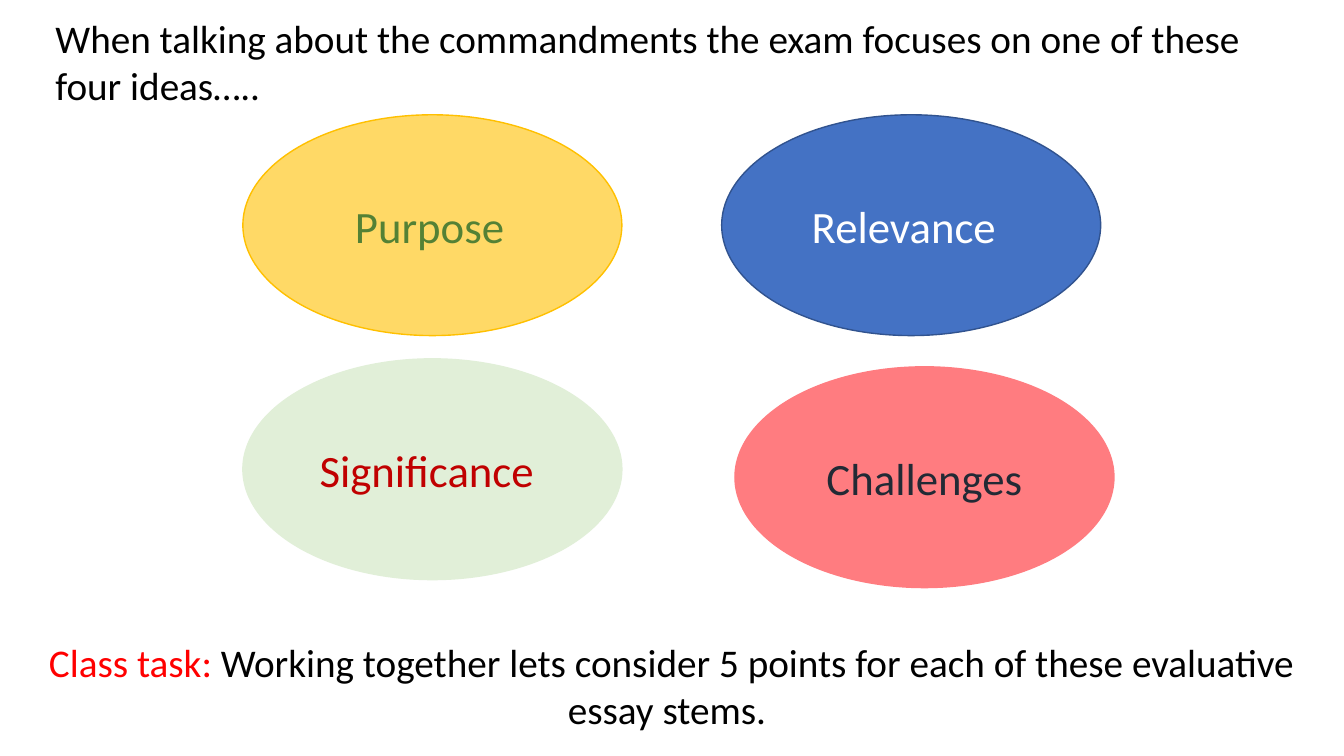
"""Build a slide of four evaluative ideas with a class task."""
import pptx
import pptx.dml.color
import pptx.enum.shapes
import pptx.enum.text
import pptx.util

Pt = pptx.util.Pt
RGBColor = pptx.dml.color.RGBColor
PP_ALIGN = pptx.enum.text.PP_ALIGN
MSO_ANCHOR = pptx.enum.text.MSO_ANCHOR
MSO_AUTO_SIZE = pptx.enum.text.MSO_AUTO_SIZE

FONT = "Calibri"
BLACK = RGBColor(0x00, 0x00, 0x00)
WHITE = RGBColor(0xFF, 0xFF, 0xFF)
RED = RGBColor(0xFF, 0x00, 0x00)
DARK_RED = RGBColor(0xC0, 0x00, 0x00)
YELLOW = RGBColor(0xFF, 0xD9, 0x66)
GOLD = RGBColor(0xFF, 0xC0, 0x00)
GREEN = RGBColor(0x54, 0x81, 0x35)
PALE_GREEN = RGBColor(0xE1, 0xEF, 0xD8)
BLUE = RGBColor(0x44, 0x72, 0xC4)
NAVY = RGBColor(0x31, 0x53, 0x8F)
PINK = RGBColor(0xFF, 0x7C, 0x80)
SLATE = RGBColor(0x22, 0x2A, 0x35)


def style_run(r, size, color):
    r.font.name = FONT
    r.font.size = Pt(size)
    r.font.color.rgb = color


prs = pptx.Presentation()
prs.slide_width, prs.slide_height = Pt(960), Pt(540)
s = prs.slides.add_slide(prs.slide_layouts[5])

title = s.shapes.title
title.left, title.top, title.width, title.height = Pt(32.4), Pt(6.7), Pt(893.5), Pt(75)
tf = title.text_frame
tf.text = "When talking about the commandments the exam focuses on one of these four ideas….."
tf.word_wrap = True
tf.auto_size = MSO_AUTO_SIZE.NONE
tf.vertical_anchor = MSO_ANCHOR.TOP
p = tf.paragraphs[0]
p.alignment = PP_ALIGN.LEFT
style_run(p.runs[0], 28, BLACK)

ideas = [
    ("Purpose", 173.5, 82, YELLOW, GOLD, GREEN, 11),
    ("Challenges", 525, 262, PINK, PINK, SLATE, 7.2),
    ("Significance", 173.5, 256.3, PALE_GREEN, PALE_GREEN, DARK_RED, 15),
    ("Relevance", 515.5, 82, BLUE, NAVY, WHITE, 17.5),
]
for name, left, top, fill, line, color, right_inset in ideas:
    sp = s.shapes.add_shape(pptx.enum.shapes.MSO_SHAPE.OVAL,
                            Pt(left), Pt(top), Pt(270.7), Pt(157.7))
    sp.shadow.inherit = False
    sp.fill.solid()
    sp.fill.fore_color.rgb = fill
    sp.line.color.rgb = line
    sp.line.width = Pt(1)
    tf = sp.text_frame
    tf.text = name
    tf.margin_right = Pt(right_inset)
    tf.vertical_anchor = MSO_ANCHOR.MIDDLE
    p = tf.paragraphs[0]
    p.alignment = PP_ALIGN.CENTER
    style_run(p.runs[0], 32, color)

task = s.shapes.add_textbox(Pt(23.8), Pt(452.2), Pt(911.5), Pt(75))
tf = task.text_frame
tf.word_wrap = True
p = tf.paragraphs[0]
p.alignment = PP_ALIGN.CENTER
for text, color in [
    ("Class task: ", RED),
    ("Working together lets consider 5 points for each of these evaluative essay stems. ", BLACK),
]:
    r = p.add_run()
    r.text = text
    style_run(r, 28, color)

prs.save("out.pptx")
